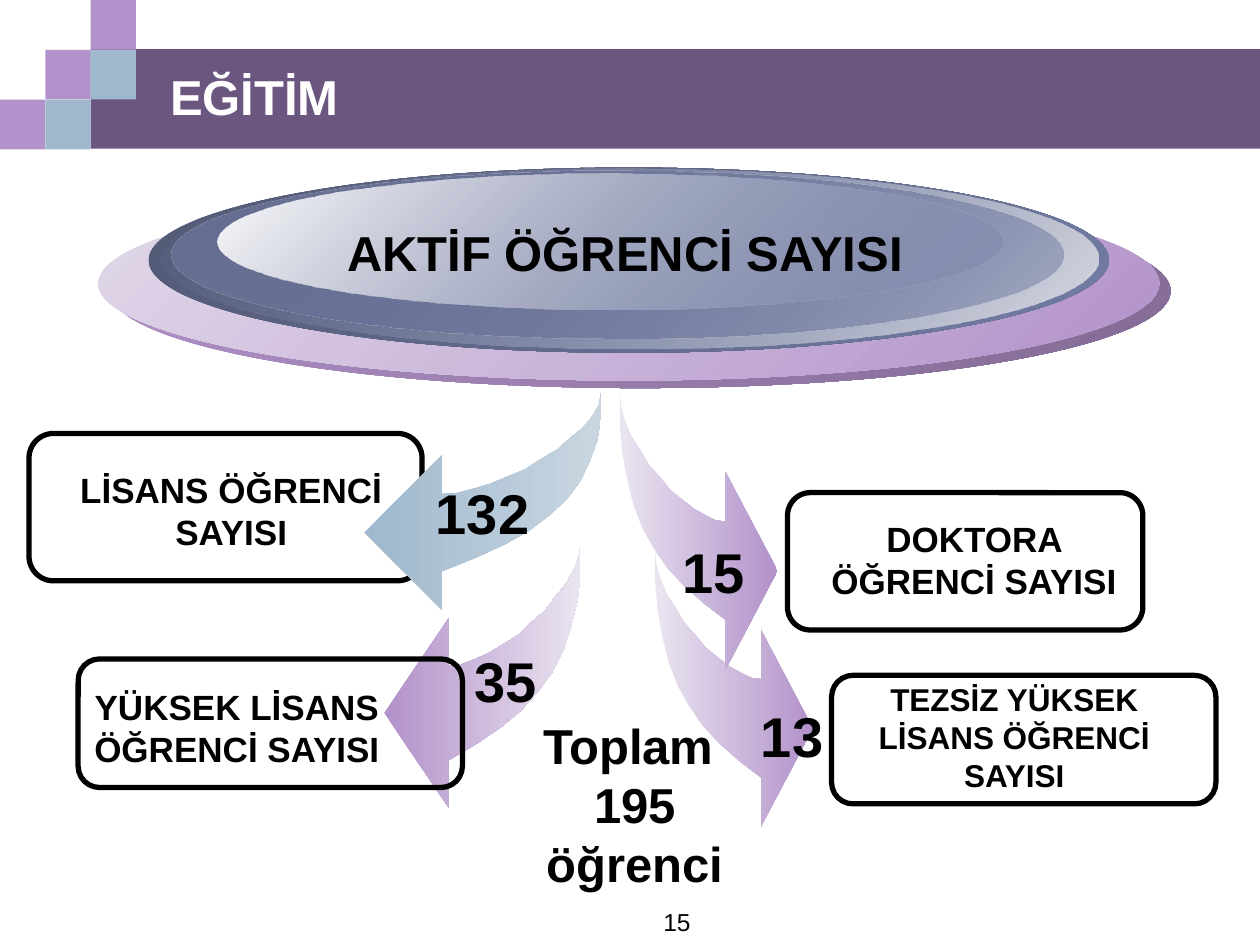
from dataclasses import dataclass

from lxml.etree import SubElement
from pptx import Presentation
from pptx.dml.color import RGBColor as Rgb
from pptx.enum.shapes import MSO_SHAPE as Preset
from pptx.enum.text import MSO_ANCHOR as Anchor, PP_ALIGN as Align
from pptx.oxml.ns import qn
from pptx.util import Inches, Pt


@dataclass(frozen=True)
class Theme:
    font: str = "Arial"
    black: str = "000000"
    white: str = "FFFFFF"
    band: str = "6B5680"
    purple: str = "B292CA"
    pale_purple: str = "EAE4F0"
    blue: str = "9FB8CD"
    pale_blue: str = "C9D6E1"
    slate: str = "727CA3"
    heading: int = 28
    figure: int = 32
    label: int = 20
    small_label: int = 18
    number: int = 14
    outline: int = 3


THEME = Theme()
ARROW_WIDTH, ARROW_HEIGHT = 125, 219
ARROW_OUTLINE = [
    (0, 0), (0, 25), (2, 48), (6, 69), (11, 89), (18, 107), (27, 123),
    (38, 139), (51, 153), (67, 167), (84, 180), (84, 219), (125, 141),
    (84, 63), (84, 102), (76, 101), (68, 97), (59, 92), (50, 85), (40, 77),
    (32, 67), (23, 57), (16, 45), (9, 34), (4, 22), (1, 11),
]


def inches(values):
    return [Inches(value) for value in values]


def fill_solid(shape, color):
    shape.fill.solid()
    shape.fill.fore_color.rgb = Rgb.from_string(color)


def fill_gradient(shape, stops, clockwise=0):
    shape.fill.gradient()
    shape.fill.gradient_angle = 360 - clockwise
    nodes = shape.element.xpath(".//a:gs")
    for stop, node, (color, opacity) in zip(shape.fill.gradient_stops, nodes, stops):
        stop.color.rgb = Rgb.from_string(color)
        if opacity < 100:
            SubElement(node[0], qn("a:alpha"), val=str(opacity * 1000))


def add_plain_shape(page, preset, box):
    shape = page.shapes.add_shape(preset, *inches(box))
    shape.shadow.inherit = False
    shape.line.fill.background()
    return shape


def write_text(frame, lines, size, color=THEME.black, bold=True, align=Align.LEFT):
    frame.word_wrap = True
    for index, line in enumerate(lines):
        para = frame.add_paragraph() if index else frame.paragraphs[0]
        para.alignment = align
        span = para.add_run()
        span.text = line
        look = {"name": THEME.font, "size": Pt(size), "bold": bold}
        for name, value in look.items():
            setattr(span.font, name, value)
        span.font.color.rgb = Rgb.from_string(color)


def add_text(page, box, lines, size, **look):
    write_text(page.shapes.add_textbox(*inches(box)).text_frame, lines, size, **look)


def add_header(page):
    tile = 0.36
    fill_solid(add_plain_shape(page, Preset.RECTANGLE, (0.72, 0.39, 9.28, 0.79)), THEME.band)
    tiles = [(0, 2, THEME.purple), (1, 1, THEME.purple), (2, 0, THEME.purple),
             (2, 1, THEME.blue), (1, 2, THEME.blue)]
    for column, row, color in tiles:
        box = (column * tile, row * 0.395, tile, 0.395)
        fill_solid(add_plain_shape(page, Preset.RECTANGLE, box), color)


def add_title(page, text):
    title = page.shapes.title
    place = dict(zip(("left", "top", "width", "height"), inches((1.25, 0.5, 8.08, 0.53))))
    for name, value in place.items():
        setattr(title, name, value)
    title.text_frame.vertical_anchor = Anchor.MIDDLE
    write_text(title.text_frame, [text], THEME.heading, THEME.white)
    title.element.getparent().append(title.element)


def add_frame(page, box):
    frame = add_plain_shape(page, Preset.ROUNDED_RECTANGLE, box)
    frame.fill.background()
    frame.line.color.rgb = Rgb.from_string(THEME.black)
    frame.line.width = Pt(THEME.outline)


def add_label(page, box, text, size=THEME.label):
    add_text(page, box, [text], size, align=Align.CENTER)


def add_figure(page, box, text):
    add_text(page, box, [text], THEME.figure)


def add_curved_arrow(page, box, dark, pale, to_left=False):
    left, top, width, height = box
    points = []
    for x, y in ARROW_OUTLINE:
        across = x / ARROW_WIDTH
        across = 1 - across if to_left else across
        points.append((Inches(left + across * width),
                       Inches(top + y / ARROW_HEIGHT * height)))
    builder = page.shapes.build_freeform(*points[0])
    builder.add_line_segments(points[1:], close=True)
    arrow = builder.convert_to_shape()
    arrow.shadow.inherit = False
    arrow.line.fill.background()
    stops = [(dark, 100), (pale, 100)]
    fill_gradient(arrow, stops if to_left else stops[::-1])


def add_disc(page):
    layers = [
        ((0.87, 1.54, 8.42, 1.54), (THEME.purple, 100), ("826B94", 100)),
        ((0.78, 1.48, 8.42, 1.54), ("E1D8E9", 100), (THEME.purple, 100)),
        ((1.18, 1.33, 7.62, 1.47), ("525975", 100), (THEME.slate, 100)),
        ((1.28, 1.34, 7.44, 1.43), (THEME.slate, 0), ("DBDDE4", 100)),
        ((1.36, 1.35, 7.08, 1.34), ("677093", 100), (THEME.slate, 48)),
        ((1.73, 1.38, 6.23, 1.08), (THEME.white, 100), (THEME.slate, 38)),
    ]
    for box, *stops in layers:
        fill_gradient(add_plain_shape(page, Preset.OVAL, box), stops, 45)


def main():
    deck = Presentation()
    deck.slide_width, deck.slide_height = inches((10, 7.5))
    page = deck.slides.add_slide(deck.slide_layouts[5])
    purples = THEME.purple, THEME.pale_purple

    add_header(page)
    add_title(page, "EĞİTİM")
    add_curved_arrow(page, (5.2, 4.37, 1.25, 2.19), *purples)
    add_frame(page, (6.25, 3.91, 2.82, 1.09))
    add_frame(page, (0.23, 3.44, 3.12, 1.17))
    add_label(page, (0.47, 3.67, 2.73, 0.77), "LİSANS ÖĞRENCİ SAYISI")
    add_curved_arrow(page, (2.89, 3.12, 1.88, 1.72), THEME.blue, THEME.pale_blue, to_left=True)
    add_curved_arrow(page, (3.05, 4.3, 1.56, 2.11), *purples, to_left=True)
    add_disc(page)
    add_label(page, (2.03, 1.72, 5.86, 0.57), "AKTİF ÖĞRENCİ SAYISI", THEME.heading)
    add_text(page, (3.25, 7.15, 2.33, 0.35), ["15"], THEME.number, bold=False, align=Align.RIGHT)
    add_label(page, (6.48, 4.06, 2.5, 0.77), "DOKTORA ÖĞRENCİ SAYISI")
    add_figure(page, (3.36, 3.75, 1.09, 0.64), "132")
    add_text(page, (3.75, 5.63, 2.58, 1.51), ["Toplam ", "195", "öğrenci"],
             THEME.heading, align=Align.CENTER)
    add_frame(page, (0.62, 5.23, 3.05, 1.02))
    add_label(page, (0.55, 5.39, 2.66, 0.77), "YÜKSEK LİSANS ÖĞRENCİ SAYISI")
    add_curved_arrow(page, (4.92, 3.12, 1.25, 2.19), *purples)
    add_figure(page, (5.32, 4.22, 0.85, 0.64), "15")
    add_figure(page, (3.67, 5.08, 1.02, 0.64), "35")
    add_frame(page, (6.6, 5.36, 3.05, 1.02))
    add_label(page, (6.72, 5.35, 2.66, 1.01), "TEZSİZ YÜKSEK LİSANS ÖĞRENCİ SAYISI",
              THEME.small_label)
    add_figure(page, (5.94, 5.52, 1.02, 0.64), "13")
    deck.save("out.pptx")


if __name__ == "__main__":
    main()
